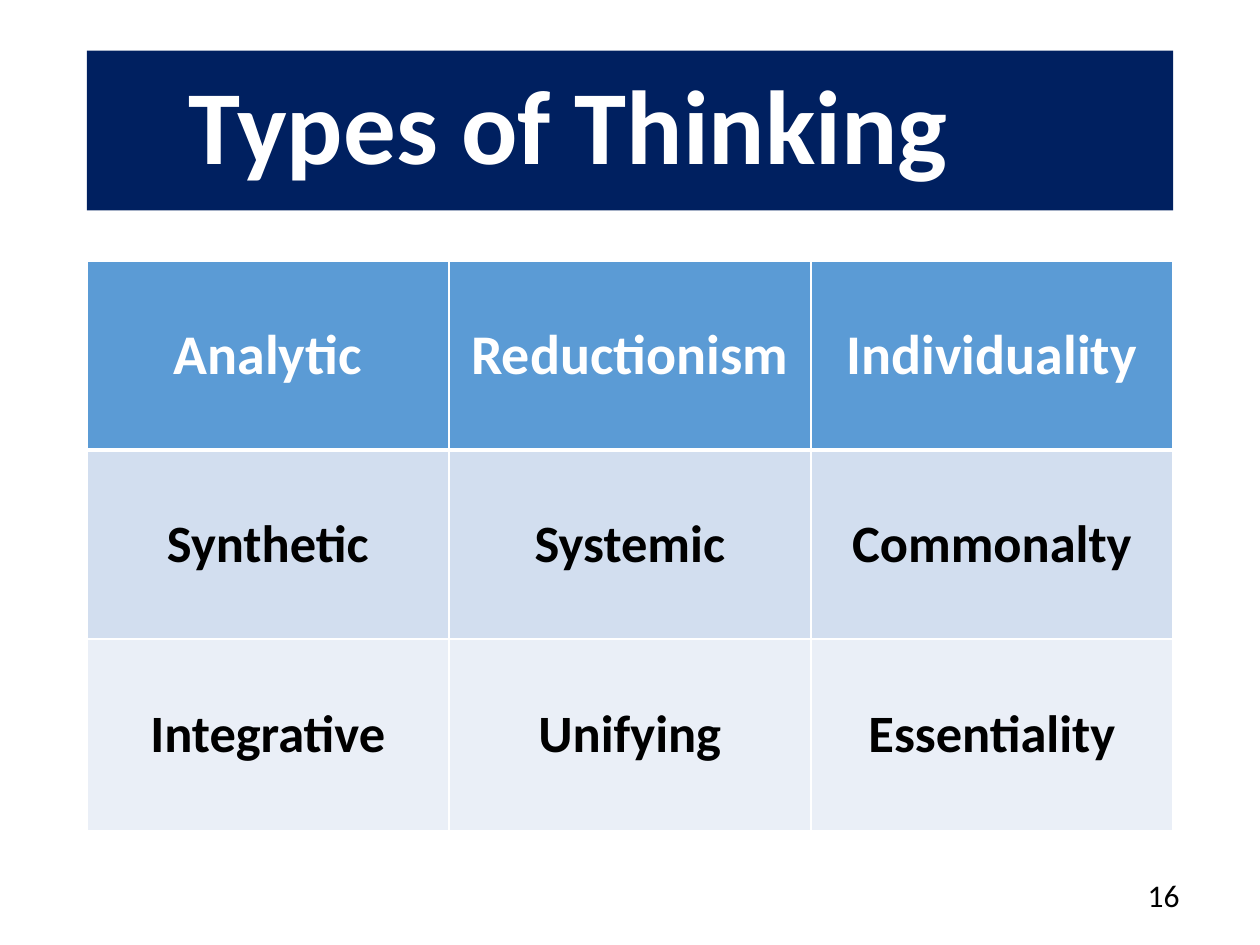
from dataclasses import dataclass

from lxml.etree import SubElement
from pptx import Presentation
from pptx.dml.color import RGBColor
from pptx.enum.text import MSO_ANCHOR, MSO_AUTO_SIZE, PP_ALIGN
from pptx.oxml.ns import qn
from pptx.slide import Slide
from pptx.table import _Cell
from pptx.util import Cm, Pt


@dataclass(frozen=True)
class Theme:
    """Colours, font and type sizes of the slide."""
    font: str = "Calibri"
    navy: str = "002060"
    blue: str = "5B9BD5"
    mid: str = "D2DEEF"
    pale: str = "EAEFF7"
    white: str = "FFFFFF"
    black: str = "000000"
    title: int = 60
    head: int = 32
    body: int = 30
    note: int = 18
    thin: int = 1
    thick: int = 3


@dataclass(frozen=True)
class Row:
    """One band of the table."""
    words: tuple[str, ...]
    fill: str
    ink: str
    size: int
    high: float
    top: int
    base: int


THEME = Theme()
LEFT, WIDE = 1.75, 21.9
ROWS = (
    Row(("Analytic", "Reductionism", "Individuality"), THEME.blue,
        THEME.white, THEME.head, 3.81, THEME.thin, THEME.thick),
    Row(("Synthetic", "Systemic", "Commonalty"), THEME.mid,
        THEME.black, THEME.body, 3.81, THEME.thick, THEME.thin),
    Row(("Integrative", "Unifying", "Essentiality"), THEME.pale,
        THEME.black, THEME.body, 3.86, THEME.thin, THEME.thin),
)


def write(frame, text: str, size: int, ink: str, align: PP_ALIGN, bold: bool = True) -> None:
    """Put one styled paragraph in a text frame."""
    frame.text = text
    para = frame.paragraphs[0]
    para.alignment = align
    font = para.font
    font.name, font.size, font.bold = THEME.font, Pt(size), bold
    font.color.rgb = RGBColor.from_string(ink)


def rule(cell: _Cell, side: str, width: int) -> None:
    """Draw a white border on one side of a cell."""
    line = SubElement(cell._tc.get_or_add_tcPr(), qn(f"a:ln{side}"), w=str(Pt(width)))
    fill = SubElement(line, qn("a:solidFill"))
    SubElement(fill, qn("a:srgbClr"), val=THEME.white)


def add_title(slide: Slide) -> None:
    """Format the title placeholder as a navy banner."""
    title = slide.shapes.title
    title.left, title.top, title.width, title.height = Cm(LEFT), Cm(1.02), Cm(WIDE), Cm(3.22)
    title.fill.solid()
    title.fill.fore_color.rgb = RGBColor.from_string(THEME.navy)
    frame = title.text_frame
    write(frame, "Types of Thinking", THEME.title, THEME.white, PP_ALIGN.CENTER)
    frame.paragraphs[0].line_spacing = 0.9
    frame.vertical_anchor = MSO_ANCHOR.MIDDLE
    frame.auto_size = MSO_AUTO_SIZE.NONE
    frame.margin_right = Cm(2.74)


def add_grid(slide: Slide) -> None:
    """Add the table of thinking types."""
    high = sum(row.high for row in ROWS)
    table = slide.shapes.add_table(
        len(ROWS), len(ROWS[0].words), Cm(LEFT), Cm(5.26), Cm(WIDE), Cm(high)).table
    for r, row in enumerate(ROWS):
        table.rows[r].height = Cm(row.high)
        for c, word in enumerate(row.words):
            cell = table.cell(r, c)
            write(cell.text_frame, word, row.size, row.ink, PP_ALIGN.CENTER)
            cell.vertical_anchor = MSO_ANCHOR.MIDDLE
            cell.margin_left = cell.margin_right = Cm(0.18)
            cell.margin_top = cell.margin_bottom = Cm(0.1)
            for side, width in zip("LRTB", (THEME.thin, THEME.thin, row.top, row.base)):
                rule(cell, side, width)
            cell.fill.solid()
            cell.fill.fore_color.rgb = RGBColor.from_string(row.fill)


def add_page(slide: Slide) -> None:
    """Add the page number."""
    frame = slide.shapes.add_textbox(Cm(19.18), Cm(17.53), Cm(4.85), Cm(1.02)).text_frame
    frame.word_wrap = True
    frame.auto_size = MSO_AUTO_SIZE.SHAPE_TO_FIT_TEXT
    write(frame, "16", THEME.note, THEME.black, PP_ALIGN.RIGHT, False)


def main() -> None:
    """Build and save the slide."""
    deck = Presentation()
    deck.slide_width, deck.slide_height = Cm(25.4), Cm(19.05)
    slide = deck.slides.add_slide(deck.slide_layouts[5])
    add_title(slide)
    add_grid(slide)
    add_page(slide)
    deck.save("out.pptx")


if __name__ == "__main__":
    main()
